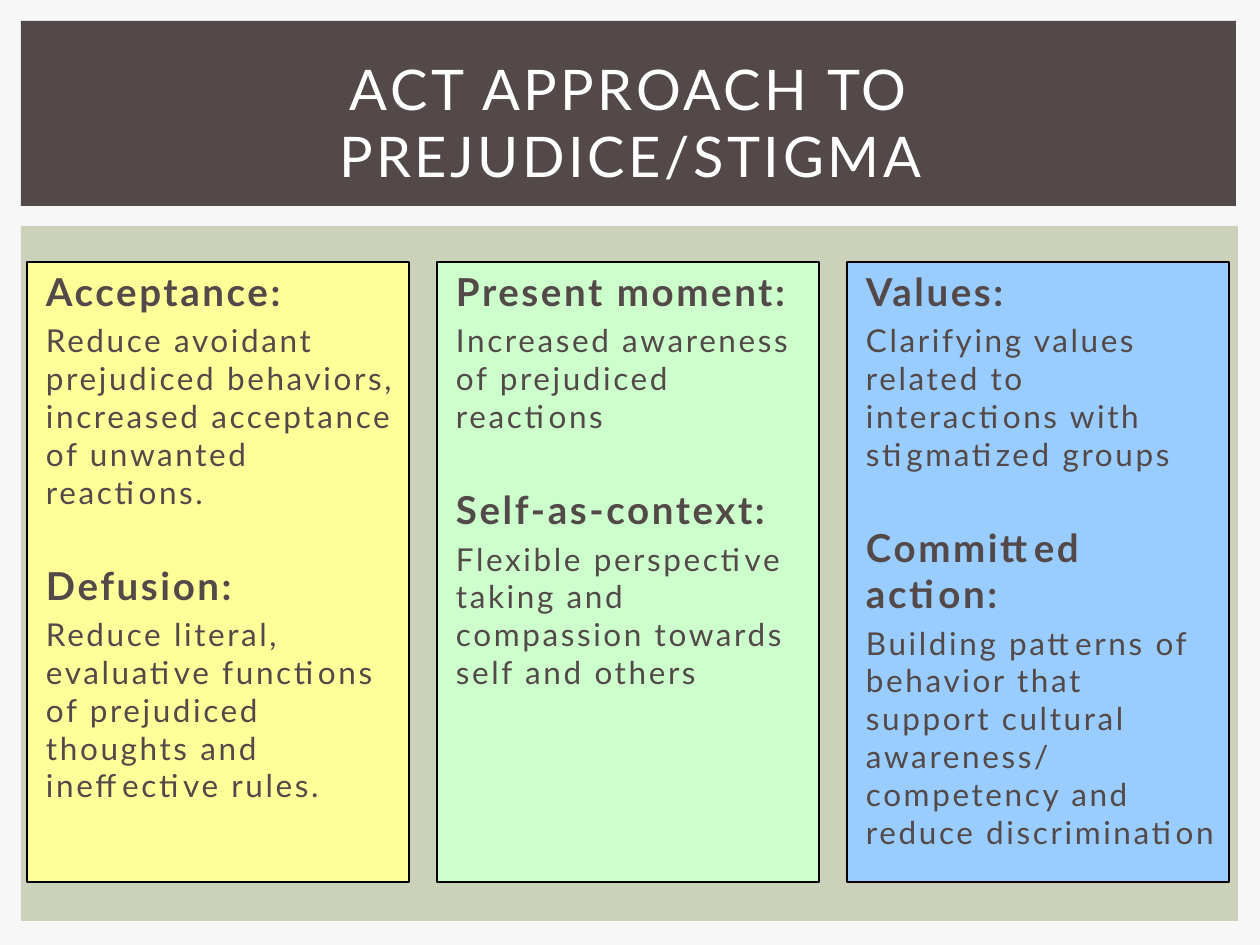
from pptx import Presentation
from pptx.dml.color import RGBColor
from pptx.enum.shapes import MSO_SHAPE as SHAPE
from pptx.enum.text import MSO_ANCHOR as ANCHOR, PP_ALIGN as ALIGN
from pptx.util import Pt

EMU_PER_PX = 914400 / 126

BACKGROUND = RGBColor(0xF7, 0xF7, 0xF7)
SAGE = RGBColor(0xCC, 0xD1, 0xB9)
BROWN = RGBColor(0x53, 0x49, 0x49)
WHITE = RGBColor(0xFF, 0xFF, 0xFF)
BLACK = RGBColor(0x00, 0x00, 0x00)
YELLOW = RGBColor(0xFF, 0xFF, 0x99)
GREEN = RGBColor(0xCC, 0xFF, 0xCC)
BLUE = RGBColor(0x99, 0xCC, 0xFF)

COLUMN_LEFT, COLUMN_STEP = 27, 410
COLUMN_TOP, COLUMN_WIDTH, COLUMN_HEIGHT = 262, 382, 620

COLUMNS = [
    (YELLOW, [
        ("Acceptance:", "Reduce avoidant prejudiced behaviors, increased "
                        "acceptance of unwanted reactions."),
        ("Defusion:", "Reduce literal, evaluative functions of prejudiced "
                      "thoughts and ineffective rules."),
    ]),
    (GREEN, [
        ("Present moment:", "Increased awareness of prejudiced reactions"),
        ("Self-as-context:", "Flexible perspective taking and compassion "
                             "towards self and others"),
    ]),
    (BLUE, [
        ("Values:", "Clarifying values related to interactions with "
                    "stigmatized groups"),
        ("Committed action:", "Building patterns of behavior that support "
                              "cultural awareness/ competency and reduce "
                              "discrimination"),
    ]),
]


def px(n):
    return round(n * EMU_PER_PX)


class Deck:
    font = "Lato"
    heading_size, body_size = 22, 18
    body_gap, section_gap = 4, 29.5

    def __init__(self):
        self.prs = Presentation()
        self.prs.slide_width, self.prs.slide_height = px(1260), px(945)
        self.s = self.prs.slides.add_slide(self.prs.slide_layouts[6])
        fill = self.s.background.fill
        fill.solid()
        fill.fore_color.rgb = BACKGROUND

    def rect(self, x, y, w, h, color, outline=None):
        sp = self.s.shapes.add_shape(SHAPE.RECTANGLE, px(x), px(y), px(w), px(h))
        sp.shadow.inherit = False
        sp.fill.solid()
        sp.fill.fore_color.rgb = color
        if outline is None:
            sp.line.fill.background()
        else:
            sp.line.color.rgb = outline
            sp.line.width = Pt(0.75)
        return sp

    def set_text(self, p, text, size, color, tracking, bold=False, align=ALIGN.LEFT):
        """Fill a paragraph; tracking is letter spacing in points."""
        r = p.add_run()
        r.text = text
        r.font._element.set("spc", str(int(tracking * 100)))
        p.alignment = align
        p.font.name, p.font.size, p.font.bold = self.font, Pt(size), bold
        p.font.color.rgb = color

    def title(self, x, y, w, h, text):
        tf = self.s.shapes.add_textbox(px(x), px(y), px(w), px(h)).text_frame
        tf.word_wrap = True
        tf.vertical_anchor = ANCHOR.MIDDLE
        self.set_text(tf.paragraphs[0], text, 32, WHITE, 2, align=ALIGN.CENTER)

    def column(self, x, color, sections):
        sp = self.rect(x, COLUMN_TOP, COLUMN_WIDTH, COLUMN_HEIGHT, color, BLACK)
        tf = sp.text_frame
        tf.word_wrap = True
        tf.vertical_anchor = ANCHOR.TOP
        tf.margin_left = px(19)
        for i, (heading, body) in enumerate(sections):
            p = tf.add_paragraph() if i else tf.paragraphs[0]
            p.space_before = Pt(self.section_gap if i else self.body_gap)
            self.set_text(p, heading, self.heading_size, BROWN, 1.5, bold=True)
            p = tf.add_paragraph()
            p.space_before = Pt(self.body_gap)
            self.set_text(p, body, self.body_size, BROWN, 1.5)


def main():
    deck = Deck()
    deck.rect(21, 226, 1217, 695, SAGE)
    deck.rect(21, 21, 1215, 185, BROWN)
    deck.title(53, 49, 1155, 145, "ACT APPROACH TO PREJUDICE/STIGMA")
    for i, (color, sections) in enumerate(COLUMNS):
        deck.column(COLUMN_LEFT + i * COLUMN_STEP, color, sections)
    deck.prs.save("out.pptx")


if __name__ == "__main__":
    main()
